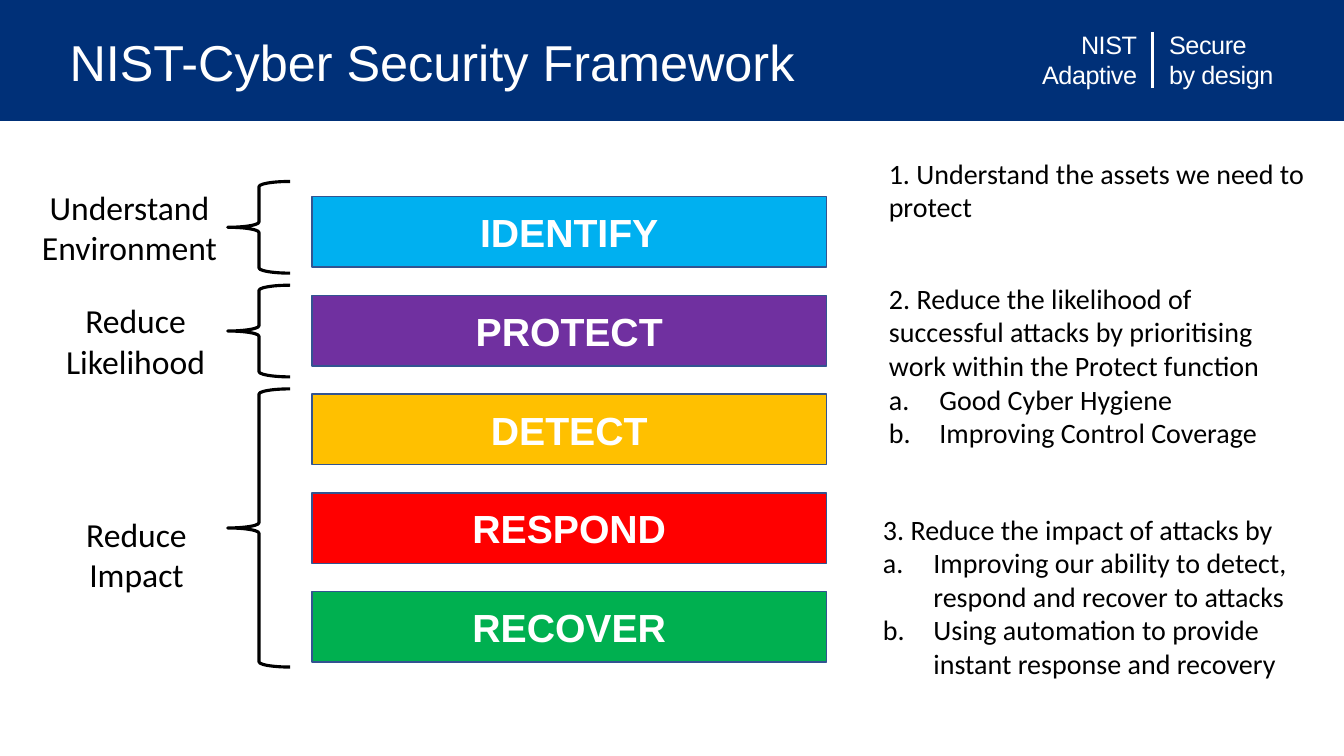
from lxml.etree import SubElement
from pptx import Presentation
from pptx.dml.color import RGBColor
from pptx.enum.shapes import MSO_CONNECTOR, MSO_SHAPE
from pptx.enum.text import MSO_ANCHOR, MSO_AUTO_SIZE, PP_ALIGN
from pptx.oxml.ns import qn
from pptx.util import Pt

NAVY, WHITE, BLACK, EDGE = "003078", "FFFFFF", "000000", "325491"
STEPS = [
    ("IDENTIFY", "00B0F0"),
    ("PROTECT", "7030A0"),
    ("DETECT", "FFC000"),
    ("RESPOND", "FF0000"),
    ("RECOVER", "00B050"),
]
GOALS = [
    (["Understand", "Environment"], 22, 141, 0, 65.5),
    (["Reduce", "Likelihood"], 39.6, 114.5, 81.4, 65.5),
    (["Reduce", "Impact"], 54, 87, 234, 198.7),
]
GAP = 8.6
NOTE = ["1. Understand the assets we need to protect"]
LOWER = [
    "2. Reduce the likelihood of successful attacks by prioritising work within the Protect function",
    "Good Cyber Hygiene",
    "Improving Control Coverage",
]
CUT = [
    "3. Reduce the impact of attacks by",
    "Improving our ability to detect, respond and recover to attacks",
    "Using automation to provide instant response and recovery",
]


def color(code):
    return RGBColor.from_string(code)


def place(shape, left, top, width, height):
    shape.left, shape.top = Pt(left), Pt(top)
    shape.width, shape.height = Pt(width), Pt(height)


def mark(para, listed):
    props = para._p.get_or_add_pPr()
    props.set("marL", str(Pt(36) if listed else 0))
    props.set("indent", str(Pt(-36) if listed else 0))
    if listed:
        SubElement(props, qn("a:buFont"), typeface="+mj-lt")
        SubElement(props, qn("a:buAutoNum"), type="alphaLcPeriod")
    else:
        SubElement(props, qn("a:buNone"))


def write(shape, lines, size=20, font="Calibri", ink=BLACK, bold=False,
          align=PP_ALIGN.LEFT, anchor=MSO_ANCHOR.TOP, wrap=True,
          space=1.0, track=0):
    frame = shape.text_frame
    frame.word_wrap = wrap
    frame.auto_size = MSO_AUTO_SIZE.NONE
    frame.vertical_anchor = anchor
    for num, line in enumerate(lines):
        para = frame.paragraphs[0] if num == 0 else frame.add_paragraph()
        para.alignment = align
        para.line_spacing = space
        para.space_before = Pt(0)
        mark(para, num > 0 and lines in (LOWER, CUT))
        run = para.add_run()
        run.text = line
        run.font.size, run.font.name, run.font.bold = Pt(size), font, bold
        run.font.color.rgb = color(ink)
        if track:
            run._r.get_or_add_rPr().set("spc", str(track))


def label(slide, lines, left, top, width, height, **form):
    box = slide.shapes.add_textbox(Pt(left), Pt(top), Pt(width), Pt(height))
    write(box, lines, **form)


def draw(slide, kind, left, top, width, height, fill, edge, weight):
    shape = slide.shapes.add_shape(kind, Pt(left), Pt(top), Pt(width), Pt(height))
    shape.shadow.inherit = False
    if fill:
        shape.fill.solid()
        shape.fill.fore_color.rgb = color(fill)
    else:
        shape.fill.background()
    shape.line.color.rgb = color(edge)
    shape.line.width = Pt(weight)
    return shape


def header(slide, left, top, width, height):
    draw(slide, MSO_SHAPE.RECTANGLE, left, top, width, height, NAVY, NAVY, 1)
    form = dict(size=18, font="Arial", ink=WHITE, wrap=False, track=-30)
    mid = left + width - 136.5
    label(slide, ["NIST", "Adaptive"], mid - 87, top + 17.3, 82.8, 51,
          align=PP_ALIGN.RIGHT, **form)
    label(slide, ["Secure", "by design"], mid + 4.5, top + 17.3, 89.3, 51, **form)
    rule = slide.shapes.add_connector(
        MSO_CONNECTOR.STRAIGHT, Pt(mid), Pt(top + 63), Pt(mid), Pt(top + 23))
    rule.line.color.rgb = color(WHITE)
    rule.line.width = Pt(2)
    SubElement(rule._element.spPr, qn("a:effectLst"))
    title = slide.shapes.title
    slide.shapes._spTree.append(title._element)
    place(title, left + 42.5, top + 16.5, 856, 60)
    write(title, ["NIST-Cyber Security Framework"], size=36, font="Arial",
          ink=WHITE, anchor=MSO_ANCHOR.MIDDLE, space=0.9)


def stack(slide, left, top, width, height):
    tall = 50.4
    pitch = (height - tall) / (len(STEPS) - 1)
    for num, (name, fill) in enumerate(STEPS):
        bar = draw(slide, MSO_SHAPE.RECTANGLE, left, top + num * pitch,
                   width, tall, fill, EDGE, 1)
        write(bar, [name], size=28, font="Arial", ink=WHITE, bold=True,
              align=PP_ALIGN.CENTER, anchor=MSO_ANCHOR.MIDDLE)


def goals(slide, left, top, width):
    tip = top
    for lines, inset, wide, drop, tall in GOALS:
        draw(slide, MSO_SHAPE.LEFT_BRACE, left + width - 44.6, tip,
             44.6, tall, None, BLACK, 2.25)
        label(slide, lines, left + inset, top + drop, wide, 65.5,
              size=24, align=PP_ALIGN.CENTER, wrap=False)
        tip += tall + GAP


def notes(slide, left, top, width):
    label(slide, NOTE, left, top, width, 55.5)
    lower, cut = list(slide.placeholders)[1:3]
    place(lower, left, top + 89.3, width, 128.2)
    write(lower, LOWER)
    place(cut, left - 4.3, top + 254.2, width, 128.2)
    write(cut, CUT)


def main():
    deck = Presentation()
    deck.slide_width, deck.slide_height = Pt(960), Pt(540)
    slide = deck.slides.add_slide(deck.slide_layouts[3])
    header(slide, 0, 0, 960, 86)
    stack(slide, 223, 140.4, 367.2, 332.6)
    goals(slide, 0, 129.6, 207.3)
    notes(slide, 627.8, 108, 316.8)
    deck.save("out.pptx")


if __name__ == "__main__":
    main()
